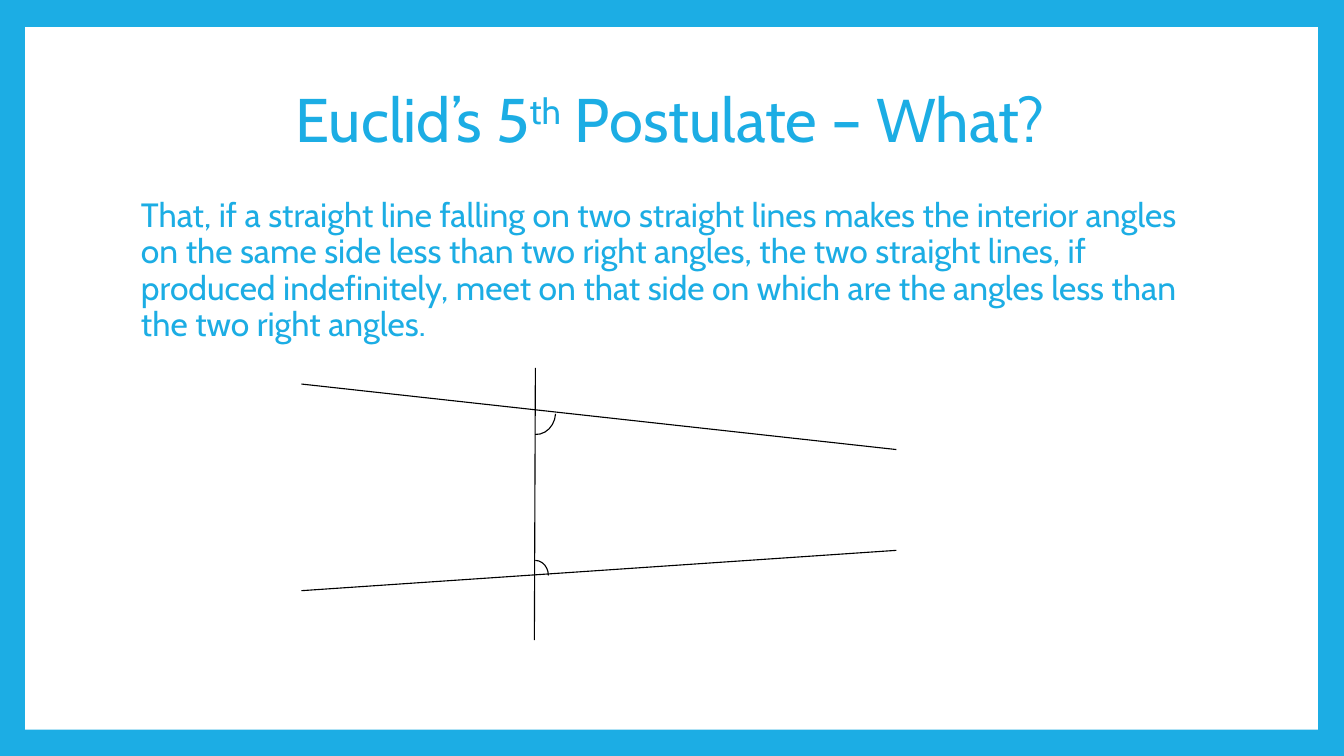
from dataclasses import dataclass

from pptx import Presentation
from pptx.dml.color import RGBColor
from pptx.enum.shapes import MSO_CONNECTOR, MSO_SHAPE
from pptx.enum.text import MSO_ANCHOR, PP_ALIGN
from pptx.oxml.ns import qn
from pptx.slide import Slide
from pptx.text.text import TextFrame, _Paragraph
from pptx.util import Inches, Pt
from lxml.etree import SubElement

BLUE = RGBColor(0x1C, 0xAD, 0xE4)
WHITE = RGBColor(0xFF, 0xFF, 0xFF)
BLACK = RGBColor(0x00, 0x00, 0x00)
STROKE = Pt(0.79)


@dataclass
class Line:
    x1: float
    y1: float
    x2: float
    y2: float


@dataclass
class Arc:
    left: float
    top: float
    width: float
    height: float
    turn: float = 0
    flip: bool = False


LINES = [
    Line(5.31, 3.65, 5.3, 6.35),
    Line(2.99, 3.81, 8.89, 4.46),
    Line(2.99, 5.86, 8.89, 5.46),
]
ARCS = [
    Arc(5.18, 5.56, 0.26, 0.3),
    Arc(5.13, 3.88, 0.38, 0.43, turn=183.1, flip=True),
]


def add_frame(slide: Slide, top: float, height: float) -> TextFrame:
    box = slide.shapes.add_textbox(
        Inches(1.25), Inches(top), Inches(10.8), Inches(height))
    box.text_frame.word_wrap = True
    return box.text_frame


def set_font(para: _Paragraph, size: int) -> None:
    para.line_spacing = 0.9
    para.font.name = "Cabin"
    para.font.size = Pt(size)
    para.font.color.rgb = BLUE


def add_line(slide: Slide, line: Line) -> None:
    item = slide.shapes.add_connector(
        MSO_CONNECTOR.STRAIGHT, Inches(line.x1), Inches(line.y1),
        Inches(line.x2), Inches(line.y2))
    item.line.color.rgb = BLACK
    item.line.width = STROKE
    SubElement(item._element.spPr, qn("a:effectLst"))


def add_arc(slide: Slide, arc: Arc) -> None:
    item = slide.shapes.add_shape(
        MSO_SHAPE.ARC, Inches(arc.left), Inches(arc.top),
        Inches(arc.width), Inches(arc.height))
    item.shadow.inherit = False
    item.fill.background()
    item.line.color.rgb = BLACK
    item.line.width = STROKE
    item.rotation = arc.turn
    if arc.flip:
        item._element.spPr.find(qn("a:xfrm")).set("flipH", "1")


def main() -> None:
    deck = Presentation()
    deck.slide_width = Inches(13.33)
    deck.slide_height = Inches(7.5)
    slide = deck.slides.add_slide(deck.slide_layouts[6])

    # Blue border around a white panel
    slide.background.fill.solid()
    slide.background.fill.fore_color.rgb = BLUE
    panel = slide.shapes.add_shape(
        MSO_SHAPE.RECTANGLE, Inches(0.25), Inches(0.27),
        Inches(12.82), Inches(6.97))
    panel.shadow.inherit = False
    panel.fill.solid()
    panel.fill.fore_color.rgb = WHITE
    panel.line.fill.background()

    # Title with a raised ordinal
    frame = add_frame(slide, 0.48, 1.48)
    frame.vertical_anchor = MSO_ANCHOR.MIDDLE
    title = frame.paragraphs[0]
    title.alignment = PP_ALIGN.CENTER
    set_font(title, 44)
    for text in ("Euclid’s 5", "th", " Postulate – What?"):
        run = title.add_run()
        run.text = text
        if text == "th":
            run.font._element.set("baseline", "30000")

    # Postulate
    body = add_frame(slide, 1.92, 5.07).paragraphs[0]
    body.text = (
        "That, if a straight line falling on two straight lines makes the "
        "interior angles on the same side less than two right angles, the "
        "two straight lines, if produced indefinitely, meet on that side on "
        "which are the angles less than the two right angles.")
    set_font(body, 24)
    body.space_before = Pt(14)
    body._p.get_or_add_pPr().set("marL", str(Inches(0.05)))

    # Lines and interior angles
    for line in LINES:
        add_line(slide, line)
    for arc in ARCS:
        add_arc(slide, arc)

    deck.save("out.pptx")


if __name__ == "__main__":
    main()
